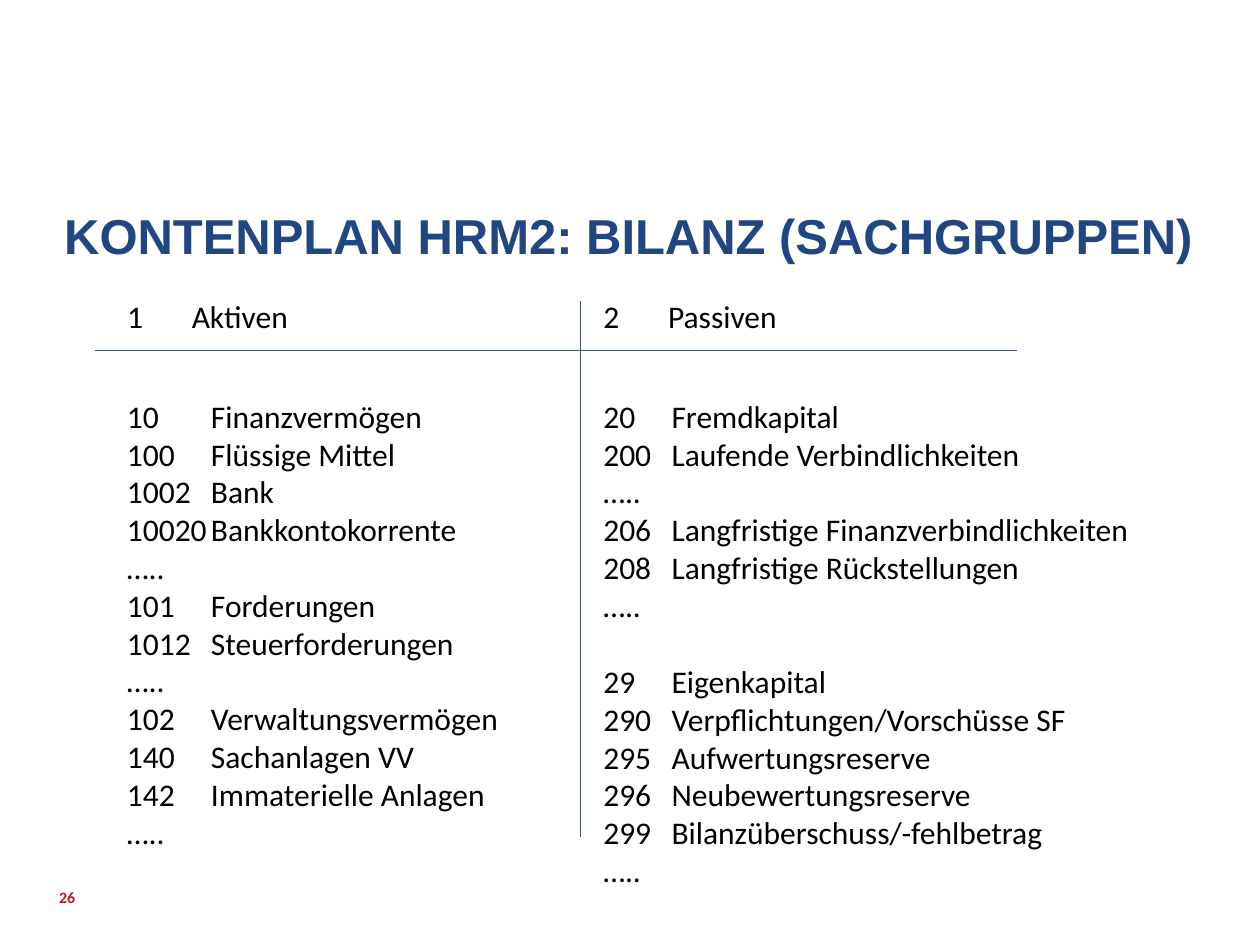
from lxml import etree
from pptx import Presentation
from pptx.dml.color import RGBColor
from pptx.enum.shapes import MSO_CONNECTOR
from pptx.enum.text import MSO_ANCHOR, MSO_AUTO_SIZE, PP_ALIGN
from pptx.oxml.ns import qn
from pptx.util import Pt

STRAIGHT = MSO_CONNECTOR.STRAIGHT
TOP, MIDDLE = MSO_ANCHOR.TOP, MSO_ANCHOR.MIDDLE
FIXED, GROW = MSO_AUTO_SIZE.NONE, MSO_AUTO_SIZE.SHAPE_TO_FIT_TEXT
LEFT = PP_ALIGN.LEFT

TITLE_BLUE, LINE_BLUE, BLACK, RED = "224681", "44546A", "000000", "B21D24"
ASSETS_X, LIABILITIES_X = 65.5, 337.7
HEADER_Y, ACCOUNTS_Y = 166.3, 223.2
GROUP_GAP = 22  # one line height above a new account group

ASSETS = [
    "10\tFinanzvermögen",
    "100\tFlüssige Mittel",
    "1002\tBank",
    "10020\tBankkontokorrente",
    "…..",
    "101\tForderungen",
    "1012\tSteuerforderungen",
    "…..",
    "102\tVerwaltungsvermögen",
    "140\tSachanlagen VV",
    "142\tImmaterielle Anlagen",
    "…..",
]
LIABILITIES = [
    "20\tFremdkapital",
    "200\tLaufende Verbindlichkeiten",
    "…..",
    "206\tLangfristige Finanzverbindlichkeiten",
    "208\tLangfristige Rückstellungen",
    "…..",
    "29\tEigenkapital",
    "290\tVerpflichtungen/Vorschüsse SF",
    "295\tAufwertungsreserve",
    "296\tNeubewertungsreserve",
    "299\tBilanzüberschuss/-fehlbetrag",
    "…..",
]


def color(hex_string):
    return RGBColor.from_string(hex_string)


def format_runs(para, font_name, size, hex_string, bold=False):
    for span in para.runs:
        span.font.name = font_name
        span.font.size = Pt(size)
        span.font.bold = bold
        span.font.color.rgb = color(hex_string)


def set_tab(para, position):
    tabs = etree.SubElement(para._p.get_or_add_pPr(), qn("a:tabLst"))
    etree.SubElement(tabs, qn("a:tab"), pos=str(Pt(position)), algn="l")


def add_title(page, text):
    title = page.shapes.title
    title.left, title.top = Pt(29.5), Pt(117.4)
    title.width, title.height = Pt(660.2), Pt(45.4)
    frame = title.text_frame
    frame.text = text
    frame.auto_size = FIXED
    frame.vertical_anchor = TOP
    para = frame.paragraphs[0]
    para.alignment = LEFT
    para.line_spacing = 0.9
    format_runs(para, "Arial", 28, TITLE_BLUE, bold=True)


def add_accounts(page, left, top, width, height, lines, tab, group_start=None):
    """Account numbers with their names aligned at a tab stop."""
    box = page.shapes.add_textbox(Pt(left), Pt(top), Pt(width), Pt(height))
    frame = box.text_frame
    frame.text = "\n".join(lines)
    frame.word_wrap = True
    frame.auto_size = GROW
    for line, para in zip(lines, frame.paragraphs):
        set_tab(para, tab)
        if line == group_start:
            para.space_before = Pt(GROUP_GAP)
        format_runs(para, "Calibri", 18, BLACK)


def add_rule(page, x1, y1, x2, y2):
    rule = page.shapes.add_connector(STRAIGHT, Pt(x1), Pt(y1), Pt(x2), Pt(y2))
    rule.line.color.rgb = color(LINE_BLUE)
    rule.line.width = Pt(0.5)
    etree.SubElement(rule._element.spPr, qn("a:effectLst"))


def add_page_number(page, number):
    box = page.shapes.add_textbox(Pt(33.8), Pt(498.2), Pt(162), Pt(28.8))
    frame = box.text_frame
    frame.text = number
    frame.word_wrap = True
    frame.vertical_anchor = MIDDLE
    frame.margin_left = frame.margin_right = 0
    frame.margin_top = frame.margin_bottom = 0
    format_runs(frame.paragraphs[0], "Calibri", 9, RED, bold=True)


def main():
    deck = Presentation()
    deck.slide_width, deck.slide_height = Pt(720), Pt(540)
    page = deck.slides.add_slide(deck.slide_layouts[5])
    add_title(page, "KONTENPLAN HRM2: BILANZ (SACHGRUPPEN)")

    # Column headers
    add_accounts(page, ASSETS_X, HEADER_Y, 118.8, 28.8, ["1\tAktiven"], 37)
    add_accounts(page, LIABILITIES_X, HEADER_Y, 147.6, 28.8, ["2\tPassiven"], 37)

    # Accounts on both sides of the balance sheet
    add_accounts(page, ASSETS_X, ACCOUNTS_Y, 254.9, 269.3, ASSETS, 48)
    add_accounts(page, LIABILITIES_X, ACCOUNTS_Y, 331.2, 290.9, LIABILITIES, 39,
                 group_start="29\tEigenkapital")

    # T-account lines
    add_rule(page, 331.9, 172.1, 331.9, 478.1)
    add_rule(page, 54, 200.2, 581, 200.2)

    add_page_number(page, "26")
    deck.save("out.pptx")


if __name__ == "__main__":
    main()
